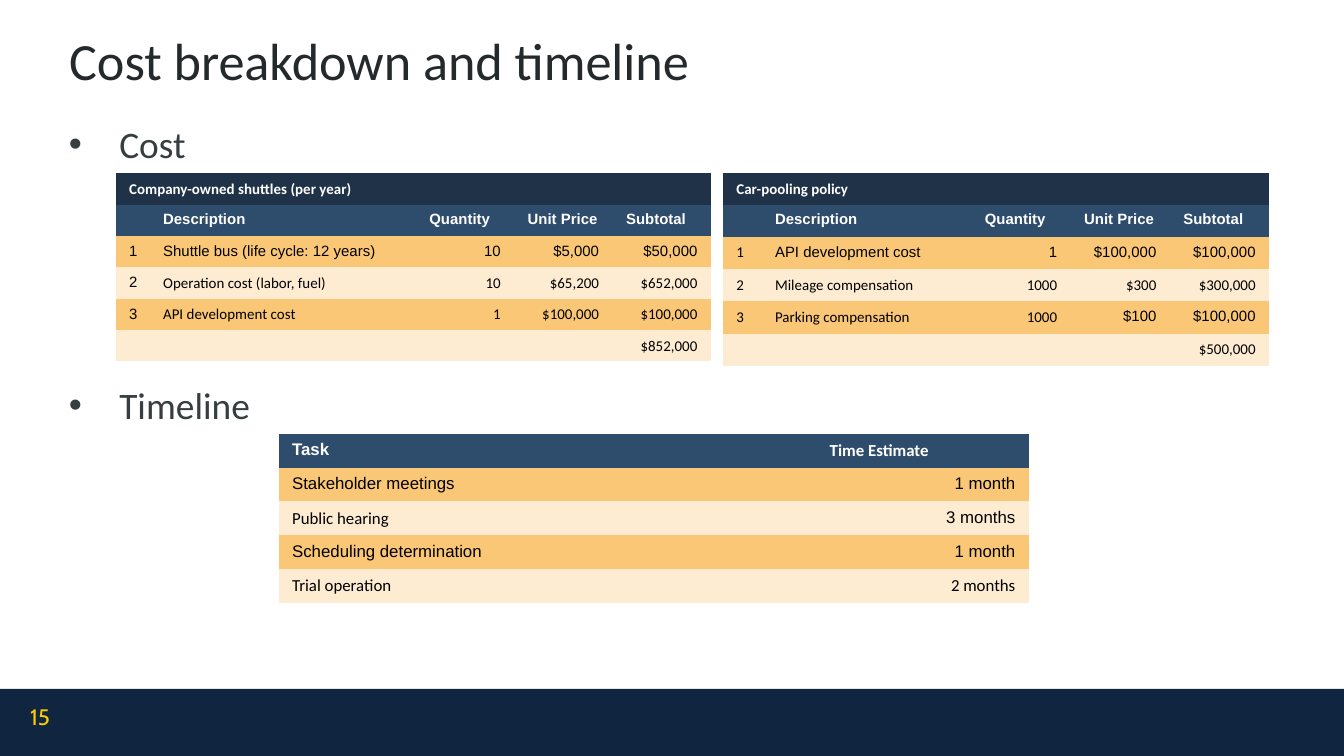
import pptx
import pptx.dml.color
import pptx.enum.shapes
import pptx.enum.text
import pptx.oxml.ns
import pptx.util
from lxml import etree

Pt = pptx.util.Pt
RGBColor = pptx.dml.color.RGBColor
Align = pptx.enum.text.PP_ALIGN
Anchor = pptx.enum.text.MSO_ANCHOR
qn = pptx.oxml.ns.qn

NAVY = RGBColor(0x10, 0x25, 0x3F)
CAPTION = RGBColor(0x1F, 0x32, 0x48)
HEADER = RGBColor(0x2E, 0x4C, 0x6B)
AMBER = RGBColor(0xFA, 0xC7, 0x77)
CREAM = RGBColor(0xFD, 0xEC, 0xD2)
WHITE = RGBColor(0xFF, 0xFF, 0xFF)
BLACK = RGBColor(0, 0, 0)
TITLE = RGBColor(0x24, 0x29, 0x2B)
BODY = RGBColor(0x37, 0x3E, 0x40)
YELLOW = RGBColor(0xFB, 0xCB, 0x06)

FONTS = {"A": "Arial", "C": "Calibri"}
NO_STYLE = "{2D5ABB26-0587-4C30-8999-92F81FD0307C}"
SLIDE_WIDTH, SLIDE_HEIGHT, FOOTER_HEIGHT = 720, 405, 36
COST_HEADER = ("", "Description", "Quantity", "Unit Price", "Subtotal")

# Each row pairs its cell texts with one font letter per cell.
TABLES = [
    {
        "left": 62, "top": 92.8, "size": 8, "right_from": 2,
        "widths": (18.2, 142.6, 52.7, 52.7, 52.7),
        "heights": (14.4,) * 6,
        "caption": "Company-owned shuttles (per year)",
        "rows": [
            (COST_HEADER, "AAAAA"),
            (("1", "Shuttle bus (life cycle: 12 years)", "10", "$5,000", "$50,000"), "AAAAA"),
            (("2", "Operation cost (labor, fuel)", "10", "$65,200", "$652,000"), "ACCCC"),
            (("3", "API development cost", "1", "$100,000", "$100,000"), "ACCCC"),
            (("", "", "", "", "$852,000"), "CCCCC"),
        ],
    },
    {
        "left": 149.3, "top": 232.5, "size": 9, "right_from": 1,
        "widths": (288, 113.8),
        "heights": (18.1,) * 5,
        "rows": [
            (("Task", "Time Estimate"), "AC"),
            (("Stakeholder meetings", "1 month"), "AA"),
            (("Public hearing", "3 months"), "CA"),
            (("Scheduling determination", "1 month"), "AA"),
            (("Trial operation", "2 months"), "CC"),
        ],
    },
    {
        "left": 387.3, "top": 92.8, "size": 8, "right_from": 2,
        "widths": (20.7, 112.4, 53.2, 53.2, 53.2),
        "heights": (13.7,) + (17.3,) * 5,
        "caption": "Car-pooling policy",
        "rows": [
            (COST_HEADER, "AAAAA"),
            (("1", "API development cost", "1", "$100,000", "$100,000"), "CAAAA"),
            (("2", "Mileage compensation", "1000", "$300", "$300,000"), "CCCCC"),
            (("3", "Parking compensation", "1000", "$100", "$100,000"), "CCCAA"),
            (("$500,000",), "C"),
        ],
    },
]


def write(para, text, font="Calibri", size=12, color=BLACK, bold=False, align=Align.LEFT):
    para.alignment = align
    if not text:
        etree.SubElement(para._p, qn("a:endParaRPr"), sz=str(size * 100))
        return
    span = para.add_run()
    span.text = text
    span.font.name = font
    span.font.size = Pt(size)
    span.font.color.rgb = color
    span.font.bold = bold


def add_box(slide, left, top, width, height, anchor=Anchor.MIDDLE):
    frame = slide.shapes.add_textbox(Pt(left), Pt(top), Pt(width), Pt(height)).text_frame
    frame.word_wrap = True
    frame.vertical_anchor = anchor
    return frame


def add_bullet(para, indent):
    properties = para._p.get_or_add_pPr()
    properties.set("marL", str(Pt(indent)))
    properties.set("indent", str(-Pt(indent)))
    color = etree.SubElement(properties, qn("a:buClr"))
    etree.SubElement(color, qn("a:srgbClr"), val=str(BODY))
    etree.SubElement(properties, qn("a:buFont"), typeface="Arial")
    etree.SubElement(properties, qn("a:buChar"), char="•")


def fill_cell(cell, fill, text, **style):
    cell.fill.solid()
    cell.fill.fore_color.rgb = fill
    write(cell.text_frame.paragraphs[0], text, **style)


def add_table(slide, data):
    widths, heights, size = data["widths"], data["heights"], data["size"]
    table = slide.shapes.add_table(
        len(heights), len(widths), Pt(data["left"]), Pt(data["top"]),
        Pt(sum(widths)), Pt(sum(heights))).table
    table._tbl.tblPr.find(qn("a:tableStyleId")).text = NO_STYLE
    table.first_row = table.horz_banding = False
    for column, width in zip(table.columns, widths):
        column.width = Pt(width)
    for row, height in zip(table.rows, heights):
        row.height = Pt(height)

    rows = list(data["rows"])
    fills = [HEADER] + [(AMBER, CREAM)[i % 2] for i in range(len(rows) - 1)]
    if "caption" in data:
        rows.insert(0, ((data["caption"],), "C"))
        fills.insert(0, CAPTION)
    for r, ((texts, fonts), fill) in enumerate(zip(rows, fills)):
        heading = fill in (CAPTION, HEADER)
        merged = len(texts) < len(widths)
        if merged:
            table.cell(r, 0).merge(table.cell(r, len(widths) - 1))
        for c, (text, font) in enumerate(zip(texts, fonts)):
            right = not heading and (merged or c >= data["right_from"])
            fill_cell(table.cell(r, c), fill, text, font=FONTS[font], size=size,
                      color=WHITE if heading else BLACK, bold=heading,
                      align=Align.RIGHT if right else Align.LEFT)
        for c in range(len(texts), len(widths)):
            fill_cell(table.cell(r, c), fill, "", size=size)


def main():
    deck = pptx.Presentation()
    deck.slide_width, deck.slide_height = Pt(SLIDE_WIDTH), Pt(SLIDE_HEIGHT)
    slide = deck.slides.add_slide(deck.slide_layouts[6])

    footer = slide.shapes.add_shape(
        pptx.enum.shapes.MSO_SHAPE.RECTANGLE, Pt(0), Pt(SLIDE_HEIGHT - FOOTER_HEIGHT),
        Pt(SLIDE_WIDTH), Pt(FOOTER_HEIGHT))
    footer.shadow.inherit = False
    footer.fill.solid()
    footer.fill.fore_color.rgb = NAVY
    footer.line.fill.background()

    title = add_box(slide, 30, 11.5, 641, 41)
    write(title.paragraphs[0], "Cost breakdown and timeline", size=28, color=TITLE)
    number = add_box(slide, 9, 373, 162, 21.6)
    write(number.paragraphs[0], "15", font="Cabin", size=12, color=YELLOW)

    body = add_box(slide, 29.8, 61.2, 641, 290, anchor=Anchor.TOP)
    cost, timeline = body.paragraphs[0], body.add_paragraph()
    timeline.space_before = Pt(116)
    for para, text in ((cost, "Cost"), (timeline, "Timeline")):
        add_bullet(para, 27)
        write(para, text, size=20, color=BODY)

    for data in TABLES:
        add_table(slide, data)
    deck.save("out.pptx")


if __name__ == "__main__":
    main()
